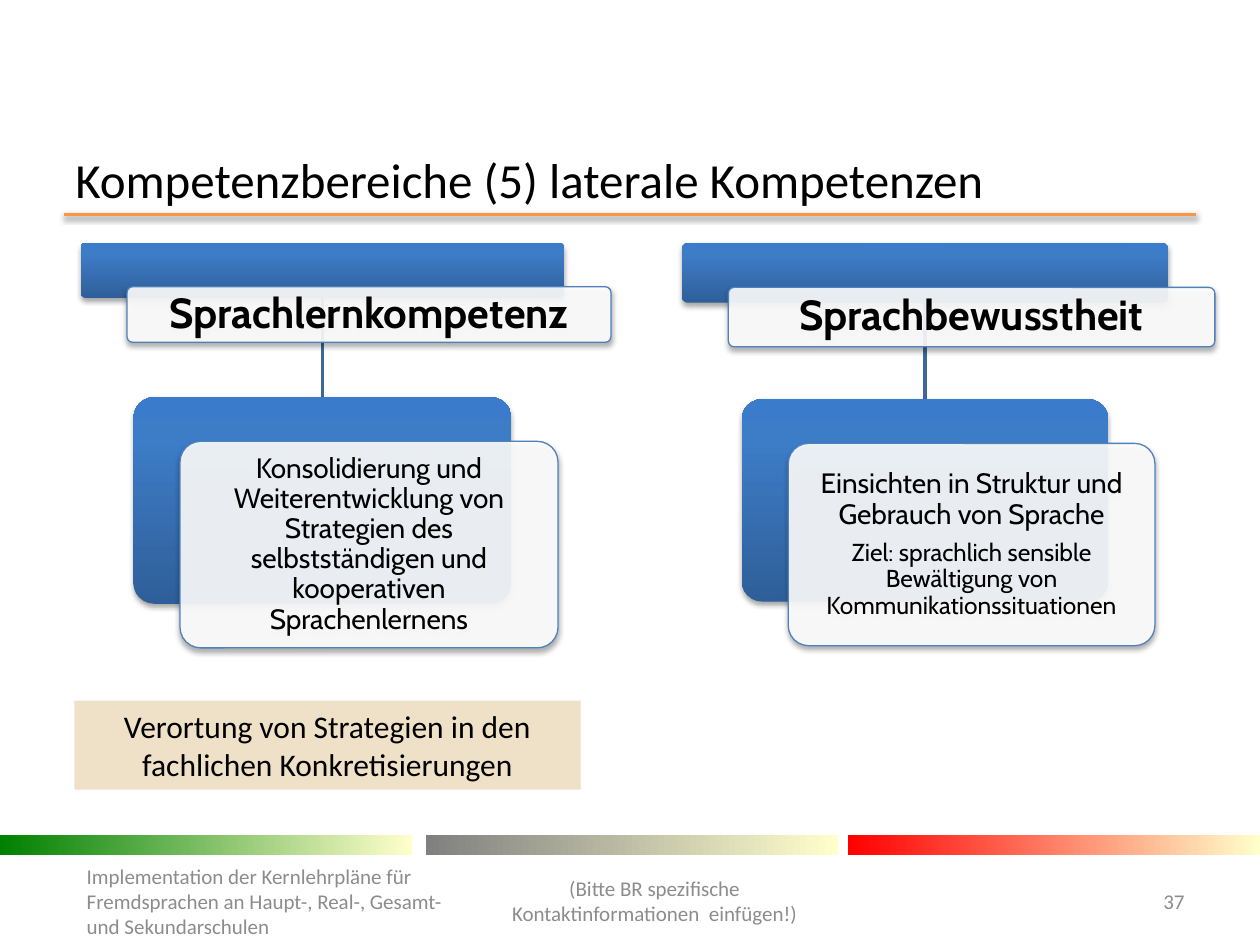
from lxml import etree
from pptx import Presentation
from pptx.dml.color import RGBColor as Rgb
from pptx.enum.shapes import MSO_CONNECTOR as Conn, MSO_SHAPE as Kind
from pptx.enum.text import MSO_ANCHOR as Anchor, PP_ALIGN as Align
from pptx.oxml.ns import qn
from pptx.util import Pt

HEX = {
    "ink": "000000", "paper": "FFFFFF", "grey": "8C8C8C", "sand": "EFE0C8",
    "rule": "F79646", "edge": "4F81BD", "link": "3F6797",
    "deep": "2F5F99", "mid": "3D7CC7", "top": "3A7CCB",
    "green": "008000", "stone": "808080", "red": "FF0000", "cream": "FFFFCC",
}
BLUE = [(0, "deep"), (80, "mid"), (100, "top")]
SHIFT = 26.6, 25.2  # offset of a front card from its back panel


def sub(node, tag, **attrs):
    return etree.SubElement(node, qn(tag), {k: str(v) for k, v in attrs.items()})


def tint(node, name, alpha=None):
    """Append a colour, with alpha in percent."""
    clr = sub(node, "a:srgbClr", val=HEX[name])
    if alpha:
        sub(clr, "a:alpha", val=alpha * 1000)


def fade(shape, stops, angle=0):
    """Give the shape a linear gradient; stops are (percent, colour)."""
    shape.fill.gradient()
    grad = shape._element.spPr.find(qn("a:gradFill"))
    for child in list(grad):
        grad.remove(child)
    row = sub(grad, "a:gsLst")
    for pos, name in stops:
        tint(sub(row, "a:gs", pos=pos * 1000), name)
    sub(grad, "a:lin", ang=angle * 60000, scaled=0)


def shade(shape, alpha=None, dist=1.8):
    """Replace the theme shadow by a soft one below, or by none."""
    props = shape._element.spPr
    for old in props.findall(qn("a:effectLst")):
        props.remove(old)
    box = sub(props, "a:effectLst")
    if alpha:
        drop = sub(box, "a:outerShdw", blurRad=Pt(3.1), dist=Pt(dist),
                   dir=90 * 60000, rotWithShape=0)
        tint(drop, "ink", alpha)


def write(shape, text, size=12, font="Calibri", color="ink", bold=False,
          align=Align.LEFT, anchor=Anchor.MIDDLE, pad=None, lead=None, after=0):
    """Fill the shape with text: a string, or a list of (string, size)."""
    frame = shape.text_frame
    frame.word_wrap = True
    frame.vertical_anchor = anchor
    if pad is not None:
        frame.margin_left = frame.margin_right = Pt(pad)
        frame.margin_top = frame.margin_bottom = Pt(pad)
    parts = [(text, size)] if isinstance(text, str) else text
    for i, (words, size) in enumerate(parts):
        para = frame.add_paragraph() if i else frame.paragraphs[0]
        para.alignment = align
        if lead:
            para.line_spacing = lead
        para.space_after = Pt(after * size)
        run = para.add_run()
        run.text = words
        run.font.name, run.font.size, run.font.bold = font, Pt(size), bold
        run.font.color.rgb = Rgb.from_string(HEX[color])


class Deck:
    def __init__(self, wide, high):
        self.show = Presentation()
        self.show.slide_width, self.show.slide_height = Pt(wide), Pt(high)
        self.slide = self.show.slides.add_slide(self.show.slide_layouts[6])

    def text(self, x, y, w, h, words, **form):
        box = self.slide.shapes.add_textbox(Pt(x), Pt(y), Pt(w), Pt(h))
        write(box, words, **form)

    def line(self, x1, y1, x2, y2, color, alpha=None):
        rule = self.slide.shapes.add_connector(
            Conn.STRAIGHT, Pt(x1), Pt(y1), Pt(x2), Pt(y2))
        rule.line.color.rgb = Rgb.from_string(HEX[color])
        rule.line.width = Pt(2)
        shade(rule, alpha, 1.6)

    def block(self, x, y, w, h, fill, kind=Kind.RECTANGLE, angle=0):
        """Add a borderless shape; fill is a colour or a list of stops."""
        shape = self.slide.shapes.add_shape(kind, Pt(x), Pt(y), Pt(w), Pt(h))
        if isinstance(fill, str):
            shape.fill.solid()
            shape.fill.fore_color.rgb = Rgb.from_string(HEX[fill])
        else:
            fade(shape, fill, angle)
        shape.line.fill.background()
        shape.shadow.inherit = False
        return shape

    def card(self, x, y, w, h, words, **form):
        """Add a blue panel with a translucent text card set off from it."""
        back = self.block(x, y, w, h, BLUE, Kind.ROUNDED_RECTANGLE, 270)
        dx, dy = SHIFT
        front = self.block(x + dx, y + dy, w, h, "paper", Kind.ROUNDED_RECTANGLE)
        clr = front._element.spPr.find(qn("a:solidFill"))[0]
        sub(clr, "a:alpha", val=90000)
        front.line.color.rgb = Rgb.from_string(HEX["edge"])
        front.line.width = Pt(0.75)
        for shape in (back, front):
            shape.adjustments[0] = 0.1
            shade(shape, 35)
        write(front, words, font="Cabin", align=Align.CENTER, pad=8.5,
              lead=0.9, after=0.35, **form)

    def column(self, mid, head, body, title, words):
        """Add a heading card linked to a body card; each is (top, wide, high)."""
        (top, wide, high), (low, span, tall) = head, body
        self.line(mid, top + high, mid, low, "link")
        self.card(mid - wide / 2, top, wide, high, title, size=24, bold=True)
        self.card(mid - span / 2, low, span, tall, words)


def main():
    deck = Deck(720, 540)
    deck.line(36.5, 122.5, 683.5, 122.5, "rule", 38)
    for x, name in ((0, "green"), (243.5, "stone"), (484.5, "red")):
        deck.block(x, 477.3, 235.5, 11.5, [(0, name), (100, "cream")])
    deck.text(36, 88.5, 648, 28, "Kompetenzbereiche (5) laterale Kompetenzen",
              size=28)

    deck.column(184.3, (138.7, 276.5, 31.7), (227, 216, 118),
                "Sprachlernkompetenz",
                [("Konsolidierung und Weiterentwicklung von Strategien des "
                  "selbstständigen und kooperativen Sprachenlernens", 16)])
    deck.column(528.6, (139, 278, 34), (228.2, 209.5, 115.6),
                "Sprachbewusstheit",
                [("Einsichten in Struktur und Gebrauch von Sprache", 16),
                 ("Ziel: sprachlich sensible Bewältigung von "
                  "Kommunikationssituationen", 14)])

    note = deck.block(42.5, 400.3, 289.3, 51, "sand")
    write(note, "Verortung von Strategien in den fachlichen Konkretisierungen",
          size=18, align=Align.CENTER, anchor=Anchor.TOP)

    deck.text(42.5, 490.5, 227, 49, "Implementation der Kernlehrpläne für "
              "Fremdsprachen an Haupt-, Real-, Gesamt- und Sekundarschulen",
              color="grey")
    deck.text(269.3, 489, 209.5, 51, "(Bitte BR spezifische "
              "Kontaktinformationen  einfügen!)",
              color="grey", align=Align.CENTER)
    deck.text(638, 500.5, 46, 28.8, "37", color="grey", align=Align.RIGHT)
    deck.show.save("out.pptx")


if __name__ == "__main__":
    main()
